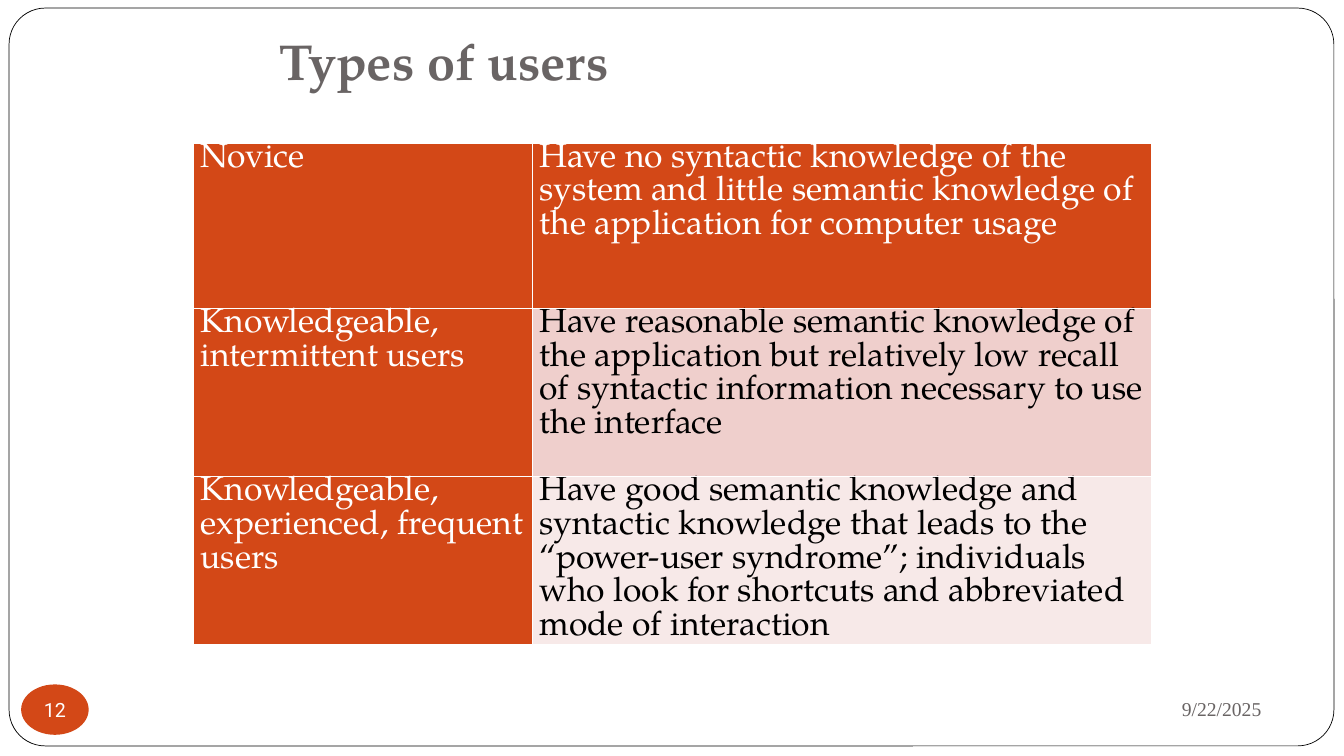
from pptx import Presentation
from pptx.dml.color import RGBColor
from pptx.enum.shapes import MSO_SHAPE
from pptx.enum.text import MSO_ANCHOR, PP_ALIGN
from pptx.util import Inches, Pt

ROUNDED, OVAL = MSO_SHAPE.ROUNDED_RECTANGLE, MSO_SHAPE.OVAL
MIDDLE, BOTTOM = MSO_ANCHOR.MIDDLE, MSO_ANCHOR.BOTTOM
LEFT, CENTER, RIGHT = PP_ALIGN.LEFT, PP_ALIGN.CENTER, PP_ALIGN.RIGHT
SERIF, SANS, DATE_FONT = "TeX Gyre Pagella", "Roboto", "Times New Roman"
COLORS = {"accent": "D34817", "gray": "696464", "white": "FFFFFF", "black": "000000",
          "band_dark": "EFCFCC", "band_light": "F7E9E8"}

USERS = [
    ("Novice",
     "Have no syntactic knowledge of the system and little semantic knowledge of "
     "the application for computer usage", "accent", "white"),
    ("Knowledgeable, intermittent users",
     "Have reasonable semantic knowledge of the application but relatively low recall "
     "of syntactic information necessary to use the interface", "band_dark", "black"),
    ("Knowledgeable, experienced, frequent users",
     "Have good semantic knowledge and syntactic knowledge that leads to the "
     "“power-user syndrome”; individuals who look for shortcuts and abbreviated "
     "mode of interaction", "band_light", "black"),
]


def color(name):
    """Return the named colour."""
    return RGBColor.from_string(COLORS[name])


def inches(box):
    """Convert a box of left, top, width and height to lengths."""
    return [Inches(length) for length in box]


def write(frame, text, font_name, size, ink, align=LEFT, bold=False):
    """Write one formatted paragraph into a text frame."""
    frame.text = text
    paragraph = frame.paragraphs[0]
    paragraph.alignment = align
    font = paragraph.font
    font.name, font.size, font.bold = font_name, Pt(size), bold
    font.color.rgb = color(ink)
    return paragraph


def add_filled(slide, preset, box, fill):
    """Add a preset shape with a plain fill and no shadow."""
    shape = slide.shapes.add_shape(preset, *inches(box))
    shape.shadow.inherit = False
    shape.fill.solid()
    shape.fill.fore_color.rgb = color(fill)
    return shape


def add_frame(slide, box):
    """Add the rounded outline around the slide."""
    frame = add_filled(slide, ROUNDED, box, "white")
    frame.adjustments[0] = 0.049
    frame.line.color.rgb = color("black")
    frame.line.width = Pt(0.5)
    slide.shapes._spTree.insert(2, frame._element)


def place_title(slide, box, text):
    """Move the title placeholder into its box and fill it."""
    title = slide.shapes.title
    title.left, title.top, title.width, title.height = inches(box)
    frame = title.text_frame
    frame.vertical_anchor = BOTTOM
    frame.margin_bottom = Inches(0.1)
    write(frame, text, SERIF, 36, "gray", bold=True)


def add_user_table(slide, box):
    """Add the table of user types, with a name and a description in each row."""
    table = slide.shapes.add_table(len(USERS), 2, *inches(box)).table
    name_width = 3.36
    table.columns[0].width = Inches(name_width)
    table.columns[1].width = Inches(box[2] - name_width)
    for row, (name, description, fill, ink) in enumerate(USERS):
        table.rows[row].height = Inches(1.64 if row == 0 else 1.67)
        entries = [(name, "accent", "white"), (description, fill, ink)]
        for column, (text, cell_fill, cell_ink) in enumerate(entries):
            cell = table.cell(row, column)
            cell.margin_left = cell.margin_right = Inches(0.07)
            cell.margin_top = cell.margin_bottom = 0
            cell.fill.solid()
            cell.fill.fore_color.rgb = color(cell_fill)
            paragraph = write(cell.text_frame, text, SERIF, 24, cell_ink)
            paragraph.line_spacing = Pt(24)


def add_date(slide, box, text):
    """Add the date at the lower right."""
    frame = slide.shapes.add_textbox(*inches(box)).text_frame
    frame.word_wrap = True
    frame.vertical_anchor = MIDDLE
    write(frame, text, DATE_FONT, 14, "gray", RIGHT)


def add_page_number(slide, box, text):
    """Add the page number in its oval badge."""
    badge = add_filled(slide, OVAL, box, "accent")
    badge.line.fill.background()
    frame = badge.text_frame
    frame.word_wrap = False
    frame.vertical_anchor = MIDDLE
    frame.margin_left = frame.margin_right = frame.margin_top = frame.margin_bottom = 0
    write(frame, text, SANS, 14, "white", CENTER)


def main():
    """Build and save the slide."""
    presentation = Presentation()
    presentation.slide_width, presentation.slide_height = Inches(13.33), Inches(7.5)
    slide = presentation.slides.add_slide(presentation.slide_layouts[5])
    add_frame(slide, (0.09, 0.08, 13.14, 7.32))
    place_title(slide, (2.67, 0.3, 8.5, 0.7), "Types of users")
    add_date(slide, (9, 6.77, 3.61, 0.52), "9/22/2025")
    add_page_number(slide, (0.21, 6.79, 0.67, 0.5), "12")
    add_user_table(slide, (1.92, 1.42, 9.5, 4.98))
    presentation.save("out.pptx")


if __name__ == "__main__":
    main()
